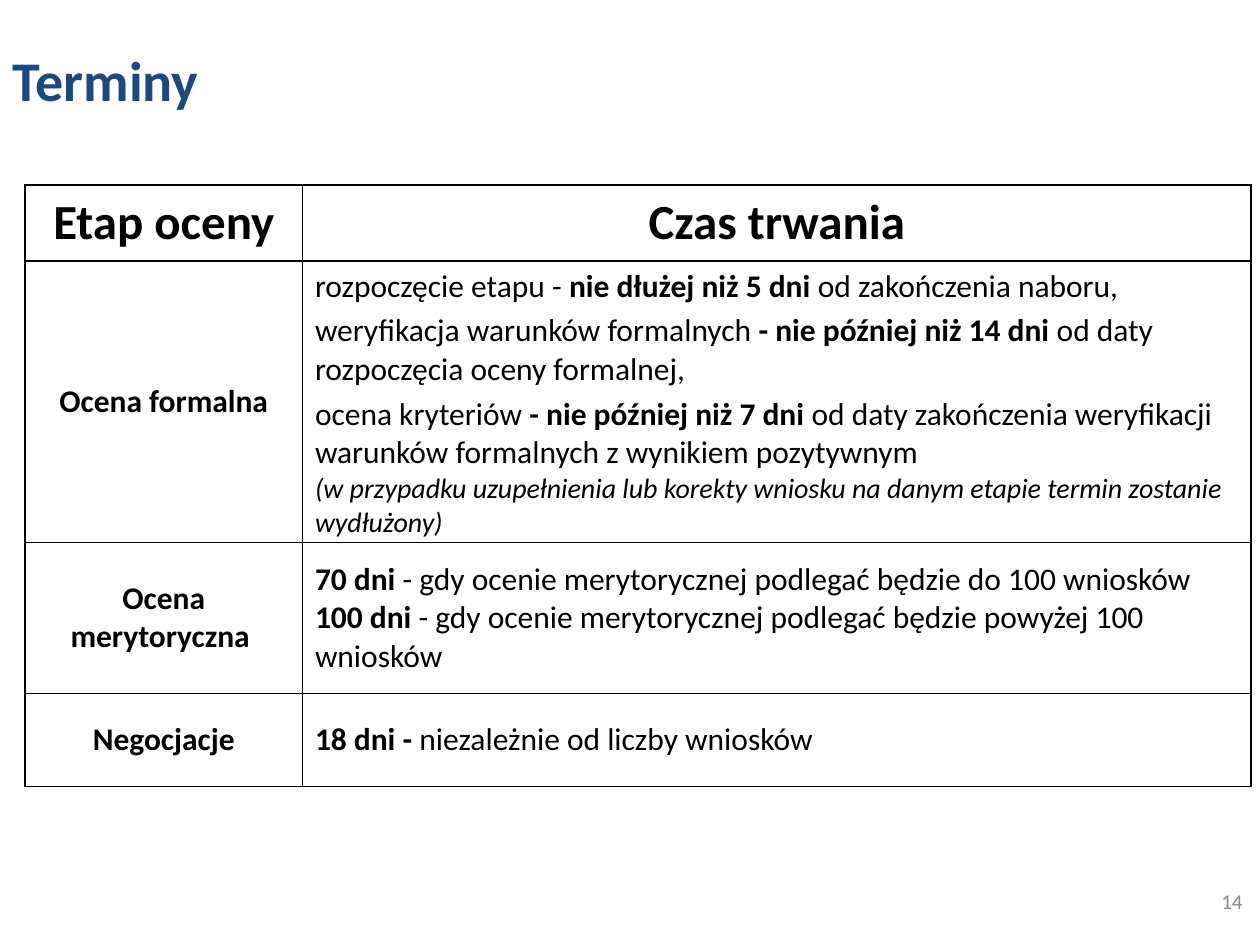
import dataclasses

import lxml.etree
import pptx
import pptx.dml.color
import pptx.enum.text
import pptx.oxml.ns
import pptx.util

Inches = pptx.util.Inches
Pt = pptx.util.Pt
ALIGN = pptx.enum.text.PP_ALIGN
MIDDLE = pptx.enum.text.MSO_ANCHOR.MIDDLE


@dataclasses.dataclass(frozen=True)
class Theme:
    font: str = "Calibri"
    title_color: str = "1F497D"
    text_color: str = "000000"
    number_color: str = "898989"
    cell_fill: str = "FFFFFF"
    border_color: str = "000000"
    border_width: float = 1
    title_size: int = 32
    header_size: int = 28
    body_size: int = 18
    note_size: int = 16
    number_size: int = 12
    paragraph_gap: float = 3.6


@dataclasses.dataclass
class Line:
    """One paragraph; parts between ** marks are bold."""
    text: str
    size: int
    align: ALIGN = ALIGN.LEFT
    gap: float = 0
    italic: bool = False


class SlideBuilder:
    def __init__(self, theme, slide):
        self.theme = theme
        self.slide = slide

    def style_font(self, font, size, color):
        font.name = self.theme.font
        font.size = Pt(size)
        font.color.rgb = pptx.dml.color.RGBColor.from_string(color)

    def fill_text(self, frame, lines, color):
        for index, line in enumerate(lines):
            paragraph = frame.add_paragraph() if index else frame.paragraphs[0]
            paragraph.alignment = line.align
            if line.gap:
                paragraph.space_before = Pt(line.gap)
            self.style_font(paragraph.font, line.size, color)
            paragraph.font.italic = line.italic
            pieces = [(part, bool(i % 2))
                      for i, part in enumerate(line.text.split("**")) if part]
            uniform = len(pieces) == 1
            if uniform:
                paragraph.font.bold = pieces[0][1]
            for part, bold in pieces:
                run = paragraph.add_run()
                run.text = part
                if not uniform:
                    run.font.bold = bold

    def place_title(self, text, left, top, width, height):
        title = self.slide.shapes.title
        title.left, title.top = Inches(left), Inches(top)
        title.width, title.height = Inches(width), Inches(height)
        title.text_frame.vertical_anchor = MIDDLE
        self.fill_text(title.text_frame, [Line(text, self.theme.title_size)],
                       self.theme.title_color)

    def add_page_number(self, text, left, top, width, height):
        number = self.slide.shapes.add_textbox(
            Inches(left), Inches(top), Inches(width), Inches(height))
        number.text_frame.word_wrap = True
        number.text_frame.vertical_anchor = MIDDLE
        self.fill_text(number.text_frame,
                       [Line(text, self.theme.number_size, ALIGN.RIGHT)],
                       self.theme.number_color)

    def add_grid(self, rows, left, top, widths, heights):
        table = self.slide.shapes.add_table(
            len(heights), len(widths), Inches(left), Inches(top),
            Inches(sum(widths)), Inches(sum(heights))).table
        table.first_row = table.horz_banding = False
        for column, width in zip(table.columns, widths):
            column.width = Inches(width)
        for row, height, contents in zip(table.rows, heights, rows):
            row.height = Inches(height)
            for cell, lines in zip(row.cells, contents):
                cell.vertical_anchor = MIDDLE
                self.fill_text(cell.text_frame, lines, self.theme.text_color)
                self.add_borders(cell)
                cell.fill.solid()
                cell.fill.fore_color.rgb = pptx.dml.color.RGBColor.from_string(
                    self.theme.cell_fill)

    def add_borders(self, cell):
        qn = pptx.oxml.ns.qn
        properties = cell._tc.get_or_add_tcPr()
        for side in ("a:lnL", "a:lnR", "a:lnT", "a:lnB"):
            border = lxml.etree.SubElement(
                properties, qn(side), w=str(Pt(self.theme.border_width)))
            fill = lxml.etree.SubElement(border, qn("a:solidFill"))
            lxml.etree.SubElement(fill, qn("a:srgbClr"), val=self.theme.border_color)


def main():
    theme = Theme()
    deck = pptx.Presentation()
    deck.slide_width, deck.slide_height = Inches(10), Inches(7.5)
    builder = SlideBuilder(theme, deck.slides.add_slide(deck.slide_layouts[5]))

    # Title and page number
    builder.place_title("**Terminy**", 0, 0, 9, 1.25)
    builder.add_page_number("14", 7.63, 6.95, 2.33, 0.4)

    # Assessment stages and their durations
    def header(text):
        return [Line(f"**{text}**", theme.header_size, ALIGN.CENTER)]

    def stage(text):
        return [Line(f"**{text}**", theme.body_size, ALIGN.CENTER)]

    def detail(text, gap=0):
        return Line(text, theme.body_size, gap=gap)

    formal_terms = [
        detail("rozpoczęcie etapu - **nie dłużej niż 5 dni **od zakończenia naboru,"),
        detail("weryfikacja warunków formalnych **- nie później niż 14 dni **"
               "od daty rozpoczęcia oceny formalnej,", theme.paragraph_gap),
        detail("ocena kryteriów** - nie później niż 7 dni **od daty zakończenia "
               "weryfikacji warunków formalnych z wynikiem pozytywnym",
               theme.paragraph_gap),
        Line("(w przypadku uzupełnienia lub korekty wniosku na danym etapie "
             "termin zostanie wydłużony)", theme.note_size, italic=True),
    ]
    merit_terms = [
        detail("**70 dni **- gdy ocenie merytorycznej podlegać będzie do 100 wniosków"),
        detail("**100 dni **- gdy ocenie merytorycznej podlegać będzie "
               "powyżej 100 wniosków"),
    ]
    negotiation_terms = [detail("**18 dni - **niezależnie od liczby wniosków")]
    builder.add_grid(
        [
            (header("Etap oceny"), header("Czas trwania")),
            (stage("Ocena formalna"), formal_terms),
            (stage("Ocena merytoryczna "), merit_terms),
            (stage("Negocjacje"), negotiation_terms),
        ],
        0.2, 1.47, widths=(2.2, 7.53), heights=(0.6, 2.23, 1.2, 0.74))

    deck.save("out.pptx")


if __name__ == "__main__":
    main()
